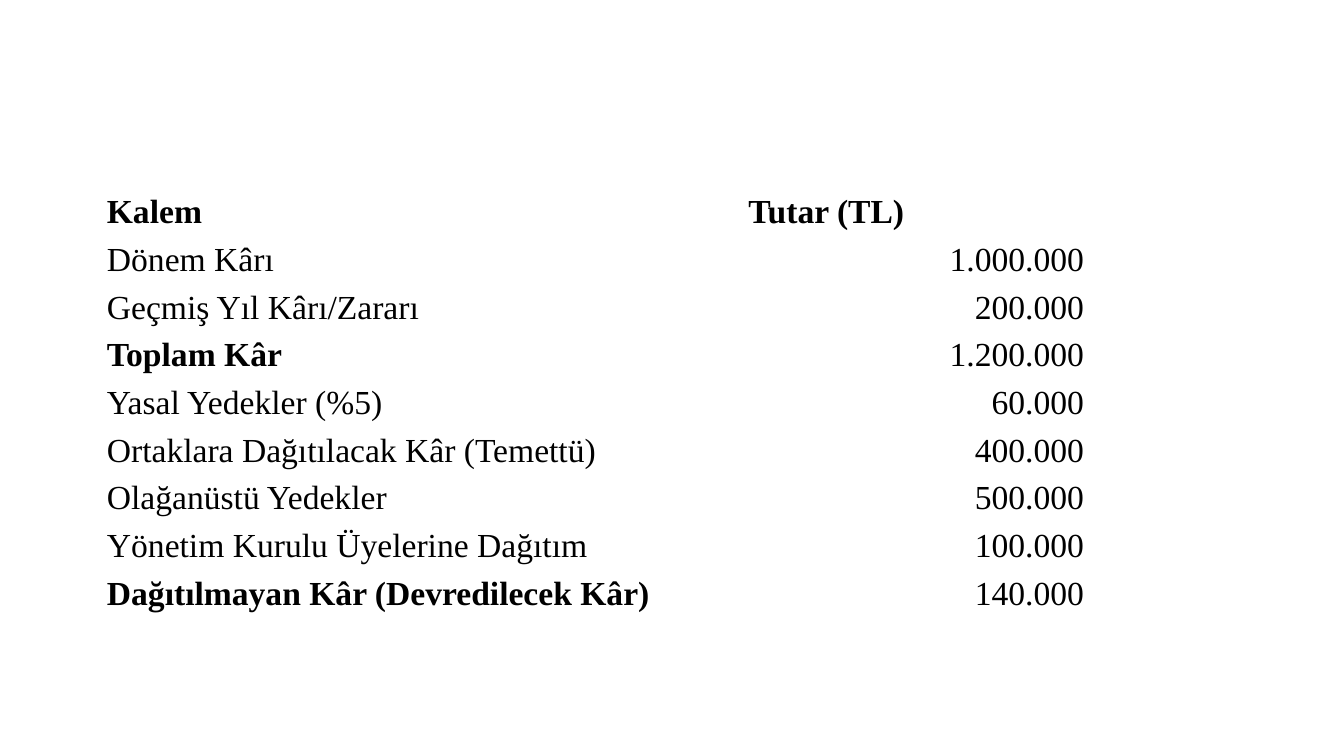
import pptx
import pptx.util
import pptx.dml.color
import pptx.enum.text
from dataclasses import dataclass

Pt = pptx.util.Pt
ALIGN = pptx.enum.text.PP_ALIGN


@dataclass(frozen=True)
class Theme:
    font: str = "Times New Roman"
    size: int = 24
    text: str = "000000"


theme = Theme()

# Label, amount, label is bold, amount is bold
profit_rows = [
    ("Kalem", "Tutar (TL)", True, True),
    ("Dönem Kârı", "1.000.000", False, False),
    ("Geçmiş Yıl Kârı/Zararı", "200.000", False, False),
    ("Toplam Kâr", "1.200.000", True, False),
    ("Yasal Yedekler (%5)", "60.000", False, False),
    ("Ortaklara Dağıtılacak Kâr (Temettü)", "400.000", False, False),
    ("Olağanüstü Yedekler", "500.000", False, False),
    ("Yönetim Kurulu Üyelerine Dağıtım", "100.000", False, False),
    ("Dağıtılmayan Kâr (Devredilecek Kâr)", "140.000", True, False),
]
col_widths = [458.2, 241.2]
row_height = 34.05

prs = pptx.Presentation()
prs.slide_width, prs.slide_height = Pt(960), Pt(540)
s = prs.slides.add_slide(prs.slide_layouts[6])

table = s.shapes.add_table(
    len(profit_rows), len(col_widths), Pt(75.6), Pt(133.9),
    Pt(sum(col_widths)), Pt(row_height * len(profit_rows)),
).table
table.first_row = False
table.horz_banding = False
for column, width in zip(table.columns, col_widths):
    column.width = Pt(width)

for i, (label, amount, label_bold, amount_bold) in enumerate(profit_rows):
    table.rows[i].height = Pt(row_height)
    amount_align = ALIGN.JUSTIFY if i == 0 else ALIGN.RIGHT
    cells = [(label, label_bold, ALIGN.JUSTIFY), (amount, amount_bold, amount_align)]
    for j, (text, bold, align) in enumerate(cells):
        cell = table.cell(i, j)
        cell.fill.background()
        cell.vertical_anchor = pptx.enum.text.MSO_ANCHOR.MIDDLE
        cell.margin_left = cell.margin_right = Pt(0.75)
        cell.margin_top = cell.margin_bottom = Pt(0.75)
        p = cell.text_frame.paragraphs[0]
        p.alignment = align
        p.line_spacing = 1.07
        r = p.add_run()
        r.text = text
        r.font.name = theme.font
        r.font.size = Pt(theme.size)
        r.font.bold = bold
        r.font.color.rgb = pptx.dml.color.RGBColor.from_string(theme.text)

prs.save("out.pptx")
